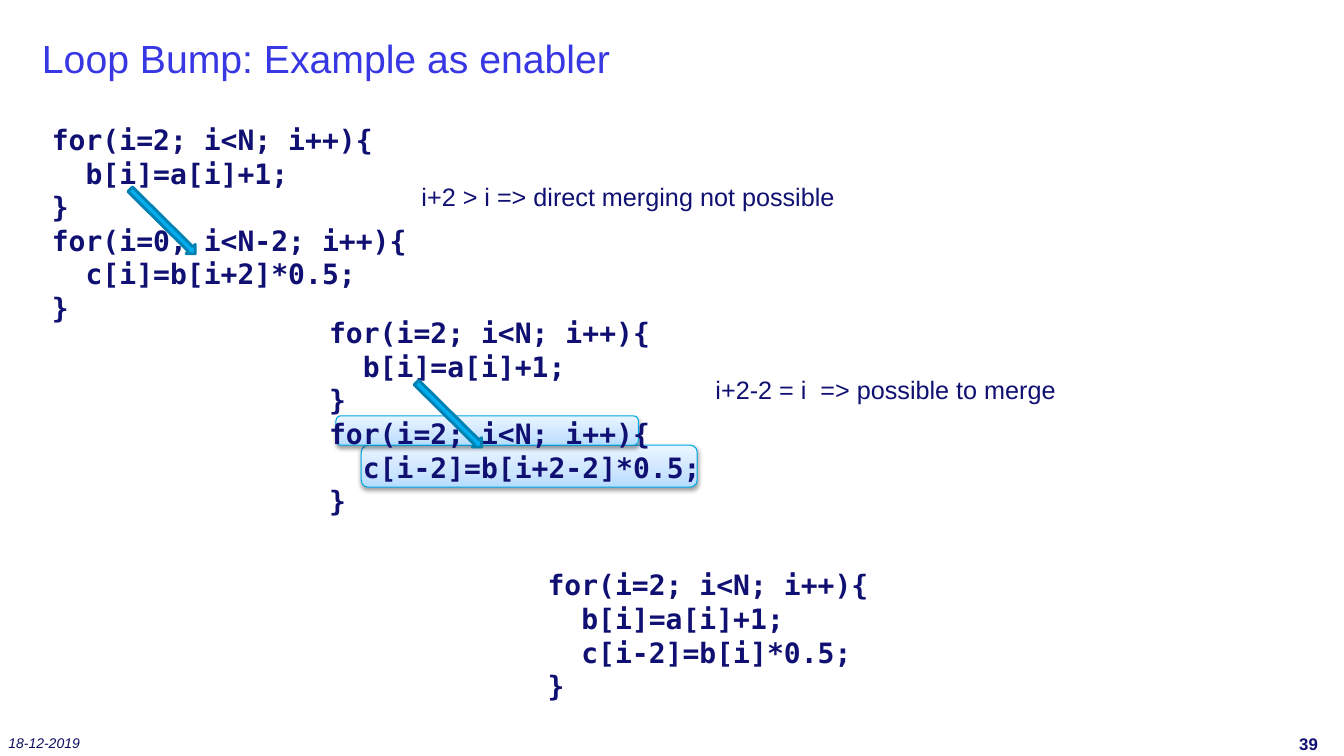
import pptx
import pptx.util
import pptx.dml.color
import pptx.enum.shapes
import pptx.enum.text
import pptx.oxml.ns
from lxml import etree

Pt = pptx.util.Pt
SHAPE = pptx.enum.shapes.MSO_SHAPE
AUTO_SIZE = pptx.enum.text.MSO_AUTO_SIZE
ANCHOR = pptx.enum.text.MSO_ANCHOR
qn = pptx.oxml.ns.qn

NAVY = "101073"
HIGHLIGHT_STOPS = [(0, "B5DCFF"), (35, "CBE5FF"), (100, "EBF5FF")]


def rgb(value):
    return pptx.dml.color.RGBColor.from_string(value)


def add_text(s, box, lines, size, color=NAVY, name="Arial", bold=False,
             italic=False, wrap=True):
    """Text box that grows with its lines."""
    sp = s.shapes.add_textbox(*map(Pt, box))
    tf = sp.text_frame
    tf.word_wrap = wrap
    tf.auto_size = AUTO_SIZE.SHAPE_TO_FIT_TEXT
    for i, line in enumerate(lines):
        p = tf.paragraphs[0] if i == 0 else tf.add_paragraph()
        p.text = line
        p.font.size, p.font.name = Pt(size), name
        p.font.bold, p.font.italic = bold, italic
        p.font.color.rgb = rgb(color)
    return sp


def add_label(s, box, text, size, **style):
    """Single line, centred vertically in a fixed box without insets."""
    tf = add_text(s, box, [text], size, **style).text_frame
    tf.auto_size = AUTO_SIZE.NONE
    tf.vertical_anchor = ANCHOR.MIDDLE
    tf.margin_left = tf.margin_top = tf.margin_right = tf.margin_bottom = 0


def add_shape(s, kind, box, line, weight):
    sp = s.shapes.add_shape(kind, *map(Pt, box))
    sp.shadow.inherit = False
    sp.line.color.rgb = rgb(line)
    sp.line.width = Pt(weight)
    return sp


def add_color(parent, value):
    return etree.SubElement(parent, qn("a:srgbClr"), val=value)


def add_highlight(s, box):
    """Rounded bar with a three-stop gradient and a soft shadow."""
    sp = add_shape(s, SHAPE.ROUNDED_RECTANGLE, box, "00AAEA", 0.75)
    sp.fill.gradient()
    sp.fill.gradient_angle = 90
    stops = sp.element.spPr.find(".//" + qn("a:gsLst"))
    for old in list(stops):
        stops.remove(old)
    for position, color in HIGHLIGHT_STOPS:
        add_color(etree.SubElement(stops, qn("a:gs"), pos=str(position * 1000)), color)
    effects = sp.element.spPr.find(qn("a:effectLst"))
    shadow = etree.SubElement(effects, qn("a:outerShdw"), blurRad=str(Pt(3.1)),
                              dist=str(Pt(1.6)), dir="5400000", rotWithShape="0")
    etree.SubElement(add_color(shadow, "000000"), qn("a:alpha"), val="38000")


def add_code(s, box, lines):
    add_text(s, box, lines, 20, name="DejaVu Sans Mono", bold=True, wrap=False)


def add_dependence(s, box, lines, arrow_x, note, note_x, note_width, highlights=()):
    """Two loops, the arrow for their dependence and a note beside them."""
    left, top = box[:2]
    for x, y, width, height in highlights:
        add_highlight(s, (left + x, top + y, width, height))
    add_code(s, box, lines)
    arrow = add_shape(s, SHAPE.RIGHT_ARROW, (left + arrow_x, top + 69.5, 65.5, 9.4),
                      "0081B1", 2)
    arrow.fill.solid()
    arrow.fill.fore_color.rgb = rgb("00AEEF")
    arrow.rotation = 44.7
    add_text(s, (left + note_x, top + 42, note_width, 29), [note], 18)


def add_frame(s, width, height, title, date, number):
    """Title at the top, date and page number at the bottom."""
    add_label(s, (30, 6, width - 54, 70.5), title, 28, color="3737E3")
    add_label(s, (6, height - 18.7, 112, 18), date, 10, color="0C0C61", italic=True)
    add_label(s, (width - 32, height - 18, 32, 18), number, 12, bold=True)


def main():
    prs = pptx.Presentation()
    width, height = 960, 540
    prs.slide_width, prs.slide_height = Pt(width), Pt(height)
    s = prs.slides.add_slide(prs.slide_layouts[6])
    add_frame(s, width, height, "Loop Bump: Example as enabler", "18-12-2019", "39")

    first_loop = ["for(i=2; i<N; i++){", "  b[i]=a[i]+1;"]

    # Loops before the bump
    add_dependence(
        s, (30, 84, 269, 153),
        first_loop + ["}", "for(i=0; i<N-2; i++){", "  c[i]=b[i+2]*0.5;", "}"],
        53.5, "i+2 > i => direct merging not possible", 264, 312.5)

    # Loops after the bump, changed lines highlighted
    add_dependence(
        s, (228, 222, 281, 153),
        first_loop + ["}", "for(i=2; i<N; i++){", "  c[i-2]=b[i+2-2]*0.5;", "}"],
        60, "i+2-2 = i  => possible to merge", 276, 260,
        highlights=[(30, 96, 240, 30), (12, 75, 216, 21)])

    # Merged loop
    add_code(s, (384, 402, 245, 104.5), first_loop + ["  c[i-2]=b[i]*0.5;", "}"])

    prs.save("out.pptx")


if __name__ == "__main__":
    main()
